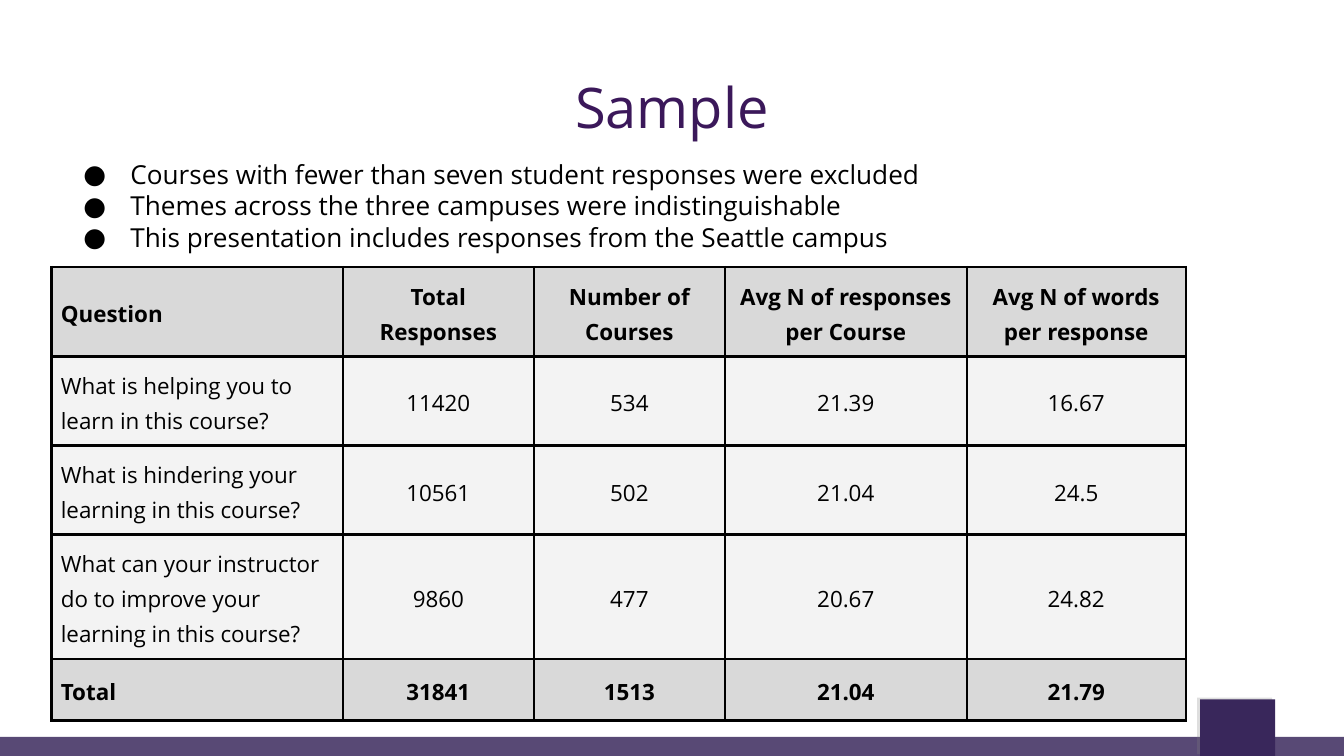
"""Build the Sample slide: title, bullet list, summary table and footer shapes."""
import pptx
import pptx.dml.color
import pptx.enum.shapes
import pptx.enum.text
import pptx.oxml
import pptx.oxml.ns
import pptx.util
from pptx.util import Cm

COLORS = {
    "purple": "39275B",
    "title": "3B185A",
    "text": "000000",
    "header": "D9D9D9",
    "body": "F3F3F3",
    "shadow": "808080",
}
FONT = "Open Sans"
BULLETS = [
    "Courses with fewer than seven student responses were excluded",
    "Themes across the three campuses were indistinguishable",
    "This presentation includes responses from the Seattle campus",
]
COLUMN_WIDTHS = [5.51, 3.61, 3.61, 4.57, 4.14]
ROW_HEIGHTS = [1.68, 1.68, 1.68, 2.34, 1.17]
ROWS = [
    ["Question", "Total Responses", "Number of Courses",
     "Avg N of responses per Course", "Avg N of words per response"],
    ["What is helping you to learn in this course?", "11420", "534", "21.39", "16.67"],
    ["What is hindering your learning in this course?", "10561", "502", "21.04", "24.5"],
    ["What can your instructor do to improve your learning in this course?",
     "9860", "477", "20.67", "24.82"],
    ["Total", "31841", "1513", "21.04", "21.79"],
]


def rgb(name):
    """Return a named colour."""
    return pptx.dml.color.RGBColor.from_string(COLORS[name])


def add_xml(parent, xml):
    """Append a DrawingML element to a parent and return it."""
    namespace = pptx.oxml.ns.nsdecls("a")
    element = pptx.oxml.parse_xml(f"<a:wrap {namespace}>{xml}</a:wrap>")[0]
    parent.append(element)
    return element


def format_runs(para, size, color="text", bold=False):
    """Apply the slide font to every run of a paragraph."""
    for span in para.runs:
        span.font.name = FONT
        span.font.size = pptx.util.Pt(size)
        span.font.bold = bold
        span.font.color.rgb = rgb(color)


def place(shape, left, top, width, height):
    """Move and size a placeholder, in centimetres."""
    shape.left, shape.top = Cm(left), Cm(top)
    shape.width, shape.height = Cm(width), Cm(height)


def add_block(page, left, top, width, height):
    """Add a plain purple rectangle."""
    block = page.shapes.add_shape(
        pptx.enum.shapes.MSO_SHAPE.RECTANGLE, Cm(left), Cm(top), Cm(width), Cm(height))
    block.shadow.inherit = False
    block.fill.solid()
    block.fill.fore_color.rgb = rgb("purple")
    block.line.fill.background()
    return block


def add_footer(page):
    """Add the translucent band and the shadowed corner block."""
    band = add_block(page, 0, 13.93, 25.4, 0.36)
    color = band.fill._xPr.find(".//" + pptx.oxml.ns.qn("a:srgbClr"))
    add_xml(color, '<a:alpha val="84000"/>')
    corner = add_block(page, 22.68, 13.22, 1.42, 1.07)
    effects = corner._element.spPr.find(pptx.oxml.ns.qn("a:effectLst"))
    add_xml(effects, '<a:outerShdw dist="22860" dir="12660000" rotWithShape="0">'
            f'<a:srgbClr val="{COLORS["shadow"]}"><a:alpha val="26000"/></a:srgbClr>'
            '</a:outerShdw>')


def fill_title(title):
    """Write the centred title."""
    place(title, 1.27, 0.89, 22.86, 2.24)
    frame = title.text_frame
    frame.text = "Sample"
    frame.auto_size = pptx.enum.text.MSO_AUTO_SIZE.NONE
    frame.vertical_anchor = pptx.enum.text.MSO_ANCHOR.MIDDLE
    frame.paragraphs[0].alignment = pptx.enum.text.PP_ALIGN.CENTER
    format_runs(frame.paragraphs[0], 30, "title")


def fill_list(body):
    """Write the bullet list."""
    place(body, 0.94, 2.74, 20.83, 2.24)
    frame = body.text_frame
    frame.text = "\n".join(BULLETS)
    frame.auto_size = pptx.enum.text.MSO_AUTO_SIZE.NONE
    frame.margin_top = frame.margin_bottom = Cm(0.25)
    for para in frame.paragraphs:
        properties = para._p.get_or_add_pPr()
        properties.set("marL", str(Cm(1.27)))
        properties.set("indent", str(Cm(-0.89)))
        add_xml(properties, f'<a:buClr><a:srgbClr val="{COLORS["text"]}"/></a:buClr>')
        add_xml(properties, f'<a:buFont typeface="{FONT}"/>')
        add_xml(properties, '<a:buChar char="●"/>')
        para.space_before = pptx.util.Pt(0)
        format_runs(para, 14)


def fill_cell(cell, text, centered, strong):
    """Write, border and fill one table cell."""
    cell.text = text
    cell.vertical_anchor = pptx.enum.text.MSO_ANCHOR.MIDDLE
    cell.margin_left = cell.margin_right = Cm(0.18)
    cell.margin_top = cell.margin_bottom = Cm(0.18)
    para = cell.text_frame.paragraphs[0]
    align = pptx.enum.text.PP_ALIGN
    para.alignment = align.CENTER if centered else align.LEFT
    para.line_spacing = 1.15
    format_runs(para, 12, bold=strong)
    properties = cell._tc.get_or_add_tcPr()
    for side in ("lnL", "lnR", "lnT", "lnB"):
        add_xml(properties, f'<a:{side} w="{pptx.util.Pt(1.5)}"><a:solidFill>'
                f'<a:srgbClr val="{COLORS["text"]}"/></a:solidFill></a:{side}>')
    cell.fill.solid()
    cell.fill.fore_color.rgb = rgb("header" if strong else "body")


def add_summary_table(page):
    """Add the table of responses per question."""
    table = page.shapes.add_table(
        len(ROWS), len(COLUMN_WIDTHS), Cm(0.97), Cm(5.05),
        Cm(sum(COLUMN_WIDTHS)), Cm(sum(ROW_HEIGHTS))).table
    table.first_row = table.horz_banding = False
    for column, width in zip(table.columns, COLUMN_WIDTHS):
        column.width = Cm(width)
    for row, height in zip(table.rows, ROW_HEIGHTS):
        row.height = Cm(height)
    for i, texts in enumerate(ROWS):
        strong = i in (0, len(ROWS) - 1)
        for j, text in enumerate(texts):
            fill_cell(table.cell(i, j), text, j > 0, strong)


def main():
    """Build and save the deck."""
    deck = pptx.Presentation()
    deck.slide_width, deck.slide_height = Cm(25.4), Cm(14.29)
    page = deck.slides.add_slide(deck.slide_layouts[1])
    fill_title(page.shapes.title)
    fill_list(page.placeholders[1])
    add_footer(page)
    add_summary_table(page)
    deck.save("out.pptx")


if __name__ == "__main__":
    main()
